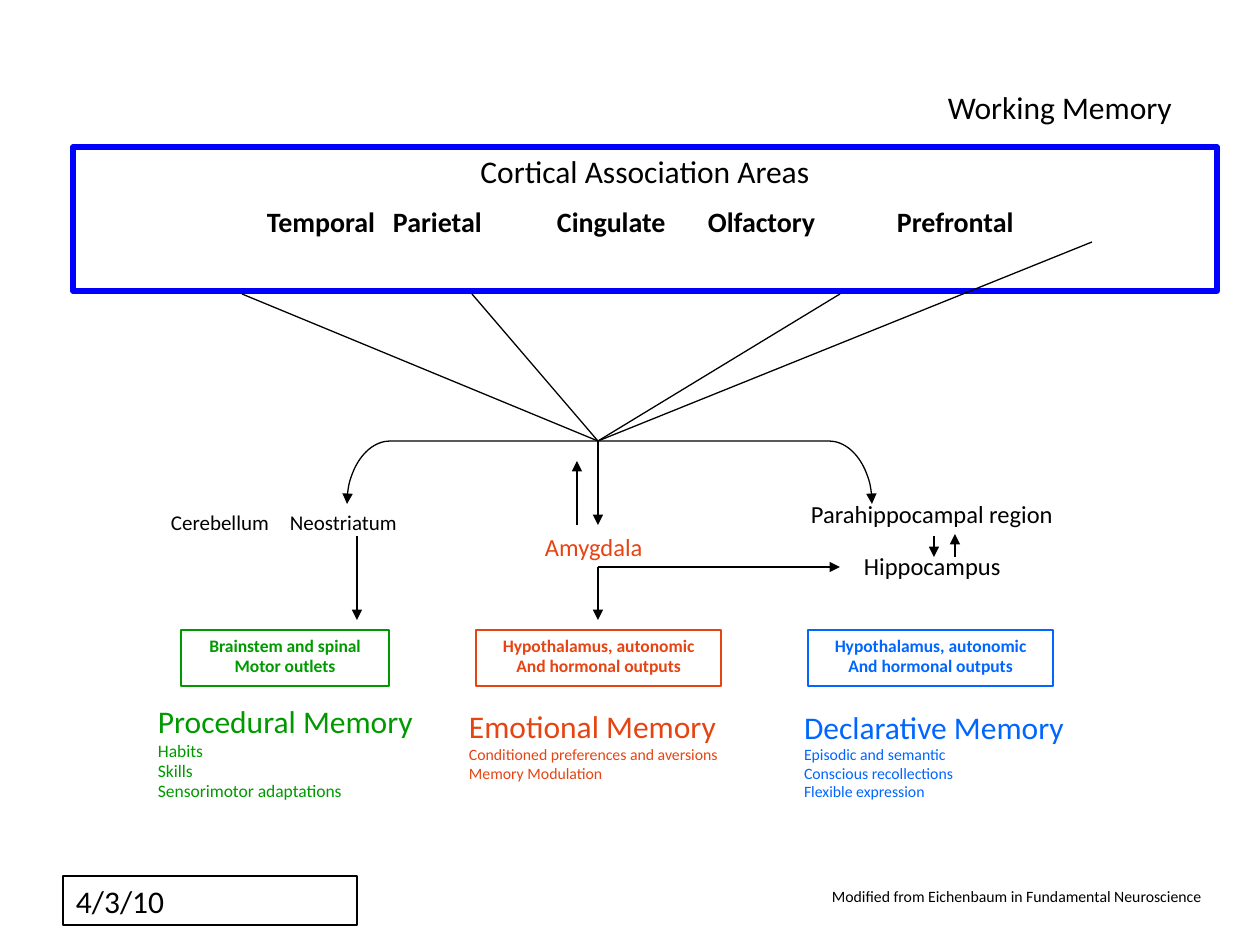
from dataclasses import dataclass

from lxml.etree import SubElement
from pptx import Presentation
from pptx.dml.color import RGBColor
from pptx.enum.shapes import MSO_CONNECTOR as Link, MSO_SHAPE as Preset
from pptx.enum.text import MSO_ANCHOR as Anchor, PP_ALIGN as Align
from pptx.oxml.ns import qn
from pptx.util import Pt


@dataclass(frozen=True)
class Theme:
    """Colours and type sizes of the slide."""
    font: str = "Calibri"
    ink: str = "000000"
    frame: str = "0000FF"
    procedural: str = "009900"
    emotional: str = "E64412"
    declarative: str = "0066FF"
    title: int = 18
    area: int = 16
    structure: int = 14
    minor: int = 12
    detail: int = 10
    small: int = 9
    thin: float = 0.75
    thick: float = 3
    leading: float = 0.96


@dataclass(frozen=True)
class Box:
    """A region in px."""
    left: int
    top: int
    width: int
    height: int

    def inner(self, left, top, width, height):
        """Return a box placed relative to this one."""
        return Box(self.left + left, self.top + top, width, height)

    def emu(self):
        """Return left, top, width and height in EMU."""
        return [px(v) for v in (self.left, self.top, self.width, self.height)]


THEME = Theme()
PX_PER_INCH = 126


def px(length):
    """Turn px into EMU."""
    return round(length * 914400 / PX_PER_INCH)


def write(frame, lines, color, align=Align.LEFT, bold=False, leading=THEME.leading):
    """Fill a text frame with (text, size) lines and return its paragraphs."""
    frame.word_wrap = True
    frame.vertical_anchor = Anchor.TOP
    frame.margin_left = frame.margin_right = px(13)
    frame.margin_bottom = px(6)
    for index, (text, size) in enumerate(lines):
        paragraph = frame.paragraphs[0] if index == 0 else frame.add_paragraph()
        paragraph.alignment = align
        paragraph.line_spacing = leading
        run = paragraph.add_run()
        run.text = text
        run.font.name = THEME.font
        run.font.size = Pt(size)
        run.font.bold = bold
        run.font.color.rgb = RGBColor.from_string(color)
    return frame.paragraphs


def label(slide, box, lines, color=THEME.ink, inset=7):
    """Add a text box."""
    frame = slide.shapes.add_textbox(*box.emu()).text_frame
    frame.margin_top = px(inset)
    write(frame, lines, color)


def outlined(slide, box, color, weight=THEME.thin, preset=Preset.RECTANGLE):
    """Add an unfilled shape with a coloured outline."""
    shape = slide.shapes.add_shape(preset, *box.emu())
    shape.shadow.inherit = False
    shape.fill.background()
    shape.line.color.rgb = RGBColor.from_string(color)
    shape.line.width = Pt(weight)
    return shape


def add_arrowheads(shape, *ends):
    """Put triangles on the named ends of a connector or open shape."""
    for end in ends:
        SubElement(shape.get_or_add_ln(), qn(f"a:{end}"), type="triangle")


def connect(slide, box, start, end, arrow=False):
    """Draw a straight line between two points of a region."""
    points = [px(v) for x, y in (start, end) for v in (box.left + x, box.top + y)]
    link = slide.shapes.add_connector(Link.STRAIGHT, *points)
    link.line.color.rgb = RGBColor.from_string(THEME.ink)
    link.line.width = Pt(THEME.thin)
    if arrow:
        add_arrowheads(link, "tailEnd")
    SubElement(link.element.spPr, qn("a:effectLst"))


def cortical_areas(slide, box):
    """Draw the framed list of cortical areas and the working memory label."""
    frame = outlined(slide, box, THEME.frame, THEME.thick).text_frame
    frame.margin_top = px(8)
    areas = {"Temporal": 181, "Parietal": 307, "Cingulate": 471,
             "Olfactory": 622, "Prefrontal": 811}
    heading, = write(frame, [("Cortical Association Areas", THEME.title)],
                     THEME.ink, Align.CENTER)
    row = frame.add_paragraph()
    row.line_spacing = THEME.leading
    row.alignment = Align.LEFT
    heading.space_before = row.space_before = Pt(9)
    stops = SubElement(row._p.get_or_add_pPr(), qn("a:tabLst"))
    for area, stop in areas.items():
        SubElement(stops, qn("a:tab"), pos=str(px(stop)), algn="l")
        run = row.add_run()
        run.text = "\t" + area
        run.font.name = THEME.font
        run.font.size = Pt(THEME.area)
        run.font.bold = True
        run.font.color.rgb = RGBColor.from_string(THEME.ink)
    label(slide, box.inner(862, -63, 263, 50), [("Working Memory", THEME.title)])


def pathways(slide, box):
    """Draw the lines into the hub and the arrows leading out of it."""
    split = outlined(slide, box.inner(336, -32, 63, 525), THEME.ink,
                     preset=Preset.LEFT_BRACKET)
    split.rotation = 90
    split.adjustments[0] = 0.69
    add_arrowheads(split, "headEnd", "tailEnd")
    hub, amygdala = (356, 199), (356, 325)
    for source in ((0, 52), (230, 52), (598, 52), (850, 0)):
        connect(slide, box, source, hub)
    arrows = (
        ((115, 294), (115, 378)),
        (hub, (356, 283)),
        ((335, 283), (335, 219)),
        (amygdala, (356, 378)),
        (amygdala, (598, 325)),
        ((692, 294), (692, 315)),
        ((713, 315), (713, 292)),
    )
    for start, end in arrows:
        connect(slide, box, start, end, arrow=True)


def brain_structures(slide, box):
    """Name the structures along the pathways."""
    structures = (
        ("Cerebellum", (0, 10, 132, 38), THEME.minor, THEME.ink),
        ("Neostriatum", (119, 10, 139, 38), THEME.minor, THEME.ink),
        ("Amygdala", (374, 33, 134, 42), THEME.structure, THEME.emotional),
        ("Parahippocampal region", (640, 0, 290, 42), THEME.structure, THEME.ink),
        ("Hippocampus", (693, 52, 175, 42), THEME.structure, THEME.ink),
    )
    for name, place, size, color in structures:
        label(slide, box.inner(*place), [(name, size)], color)


def memory_column(slide, box, color, card, outputs, drop, title, traits, size):
    """Draw an output card with the kind of memory described below it."""
    left, width = card
    frame = outlined(slide, box.inner(left, 0, width, 56), color).text_frame
    frame.margin_top = px(6)
    write(frame, [(line, THEME.detail) for line in outputs], color, Align.CENTER, True)
    label(slide, box.inner(0, drop, box.width, box.height - drop),
          [(title, THEME.title)] + [(trait, size) for trait in traits], color)


def footer(slide, box):
    """Place the date and the credit."""
    frame = outlined(slide, box.inner(0, 0, 294, 49), THEME.ink).text_frame
    frame.margin_top = px(6)
    write(frame, [("4/3/10", THEME.title)], THEME.ink, leading=1.0)
    label(slide, box.inner(756, 6, 426, 32),
          [("Modified from Eichenbaum in Fundamental Neuroscience", THEME.small)], inset=6)


def main():
    """Build and save the slide."""
    deck = Presentation()
    deck.slide_width, deck.slide_height = px(1260), px(945)
    slide = deck.slides.add_slide(deck.slide_layouts[6])
    cortical_areas(slide, Box(73, 147, 1144, 144))
    pathways(slide, Box(242, 242, 850, 378))
    brain_structures(slide, Box(158, 494, 930, 94))
    hormonal = ("Hypothalamus, autonomic", "And hormonal outputs")
    memory_column(slide, Box(145, 630, 300, 181), THEME.procedural, (36, 208),
                  ("Brainstem and spinal", "Motor outlets"), 68, "Procedural Memory",
                  ("Habits", "Skills", "Sensorimotor adaptations"), THEME.detail)
    memory_column(slide, Box(456, 630, 311, 161), THEME.emotional, (20, 245),
                  hormonal, 73, "Emotional Memory",
                  ("Conditioned preferences and aversions", "Memory Modulation"), THEME.small)
    memory_column(slide, Box(791, 630, 311, 180), THEME.declarative, (17, 245),
                  hormonal, 73, "Declarative Memory",
                  ("Episodic and semantic", "Conscious recollections", "Flexible expression"),
                  THEME.small)
    footer(slide, Box(63, 876, 1182, 49))
    deck.save("out.pptx")


if __name__ == "__main__":
    main()
